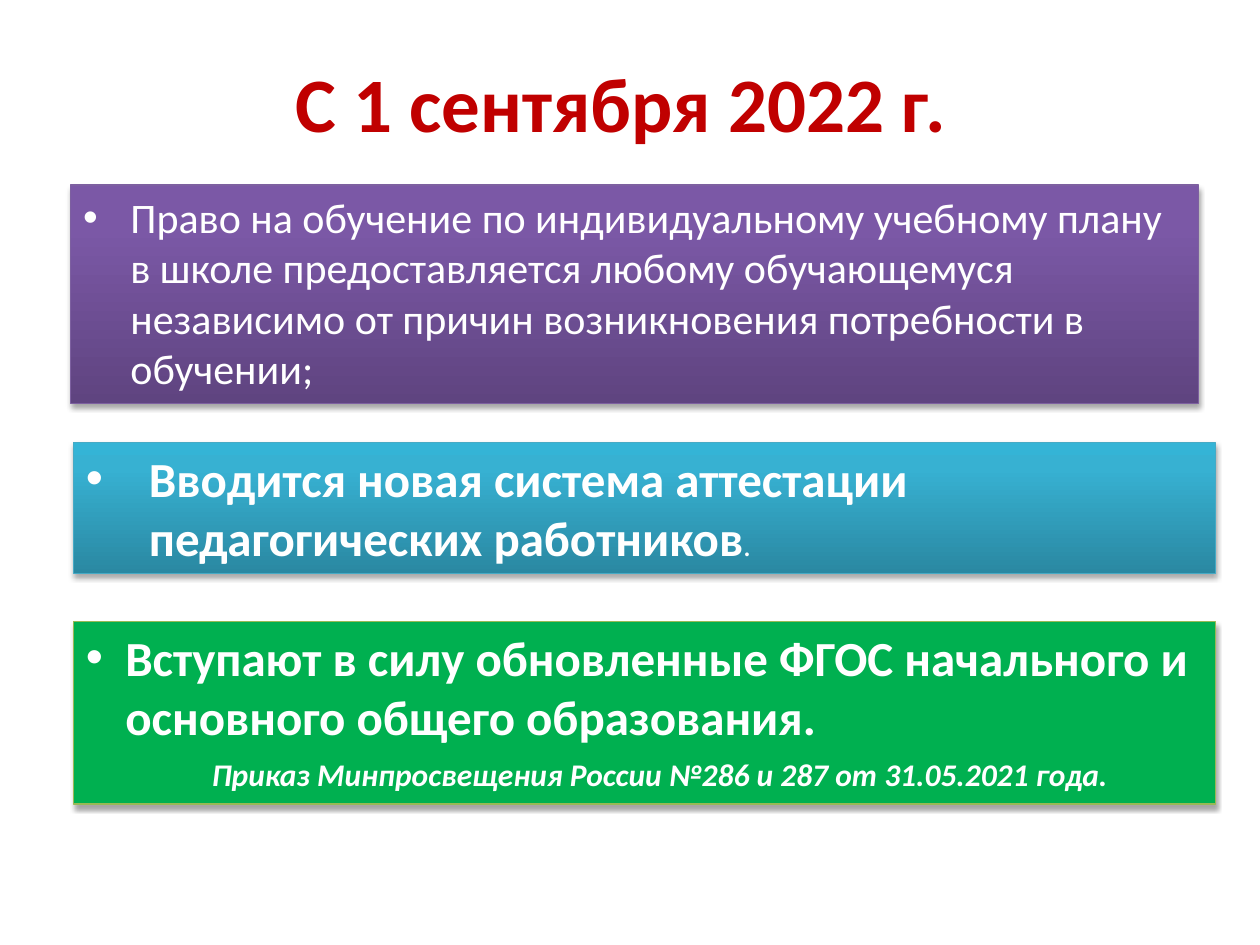
from copy import deepcopy

from lxml import etree
from pptx import Presentation
from pptx.dml.color import RGBColor
from pptx.enum.shapes import MSO_SHAPE
from pptx.enum.text import MSO_ANCHOR, MSO_AUTO_SIZE, PP_ALIGN
from pptx.oxml.ns import qn
from pptx.util import Pt

RECT = MSO_SHAPE.RECTANGLE
TOP, MIDDLE = MSO_ANCHOR.TOP, MSO_ANCHOR.MIDDLE
NO_FIT = MSO_AUTO_SIZE.NONE
LEFT, CENTER = PP_ALIGN.LEFT, PP_ALIGN.CENTER
FONT = "Calibri"
WHITE = "FFFFFF"
TITLE_RED = "C00000"
PURPLE = [(0, "5F4480"), (0.8, "7B58A6"), (1, "7C57A8")]
BLUE = [(0, "2A88A2"), (0.8, "37B1D2"), (1, "34B4D6")]
GREEN = "00B050"


def rgb(value):
    return RGBColor.from_string(value)


def place(s, left, top, width, height):
    s.left, s.top, s.width, s.height = Pt(left), Pt(top), Pt(width), Pt(height)


def add_run(p, text, size, color=WHITE, bold=False, italic=False):
    r = p.add_run()
    r.text = text
    r.font.name = FONT
    r.font.size = Pt(size)
    r.font.bold = bold
    r.font.italic = italic
    r.font.color.rgb = rgb(color)


def set_indent(p, left, hanging=0):
    pPr = p._p.get_or_add_pPr()
    pPr.set("marL", str(Pt(left)))
    pPr.set("indent", str(-Pt(hanging)))
    return pPr


def set_bullet(p, indent):
    pPr = set_indent(p, indent, indent)
    etree.SubElement(pPr, qn("a:buFont")).set("typeface", "Arial")
    etree.SubElement(pPr, qn("a:buChar")).set("char", "•")


def fill_gradient(s, stops):
    """Fill from bottom to top with (position, colour) stops."""
    s.fill.gradient()
    s.fill.gradient_angle = 90
    gs_list = s._element.spPr.find(qn("a:gradFill")).find(qn("a:gsLst"))
    while len(gs_list) < len(stops):
        gs_list.append(deepcopy(gs_list[0]))
    for stop, (position, color) in zip(s.fill.gradient_stops, stops):
        stop.position = position
        stop.color.rgb = rgb(color)


def add_shadow(s):
    effects = etree.SubElement(s._element.spPr, qn("a:effectLst"))
    shadow = etree.SubElement(effects, qn("a:outerShdw"), blurRad=str(Pt(3.1)),
                              dist=str(Pt(1.8)), dir="5400000", rotWithShape="0")
    color = etree.SubElement(shadow, qn("a:srgbClr"), val="000000")
    etree.SubElement(color, qn("a:alpha"), val="35000")


def style_panel(s, fill, line):
    """Style a panel and return its first paragraph."""
    if isinstance(fill, str):
        s.fill.solid()
        s.fill.fore_color.rgb = rgb(fill)
    else:
        fill_gradient(s, fill)
    s.line.color.rgb = rgb(line)
    s.line.width = Pt(0.75)
    add_shadow(s)
    tf = s.text_frame
    tf.word_wrap = True
    tf.auto_size = NO_FIT
    tf.vertical_anchor = TOP
    p = tf.paragraphs[0]
    p.alignment = LEFT
    return p


def add_panel(slide, top, height, fill, line):
    s = slide.shapes.add_shape(RECT, Pt(42), Pt(top), Pt(652.5), Pt(height))
    return s, style_panel(s, fill, line)


def add_title(slide, text):
    s = slide.shapes.title
    place(s, 36, 21.6, 648, 72.7)
    s.text_frame.vertical_anchor = MIDDLE
    p = s.text_frame.paragraphs[0]
    p.alignment = CENTER
    add_run(p, text, 44, TITLE_RED, bold=True)


def add_study_plan(slide):
    s = slide.placeholders[1]
    place(s, 40.3, 105.8, 644.4, 124.6)
    p = style_panel(s, PURPLE, "7D60A0")
    set_bullet(p, 27)
    add_run(p, "Право на обучение по индивидуальному учебному плану в школе "
               "предоставляется любому обучающемуся независимо от причин "
               "возникновения потребности в обучении;", 24)


def add_attestation(slide):
    s, p = add_panel(slide, 252.7, 75, BLUE, "46AAC5")
    set_bullet(p, 36)
    add_run(p, "Вводится новая система аттестации педагогических работников",
            28, bold=True)
    add_run(p, ".", 18)


def add_standards(slide):
    s, p = add_panel(slide, 355, 104.4, GREEN, "98B955")
    set_bullet(p, 22.5)
    add_run(p, "Вступают в силу обновленные ФГОС начального и основного "
               "общего образования.", 28, bold=True)
    p = s.text_frame.add_paragraph()
    p.alignment = LEFT
    p.space_before = Pt(5.5)
    set_indent(p, 72)
    add_run(p, "Приказ Минпросвещения России №286 и 287 от 31.05.2021 года.",
            18, bold=True, italic=True)


def main():
    prs = Presentation()
    prs.slide_width, prs.slide_height = Pt(720), Pt(540)
    slide = prs.slides.add_slide(prs.slide_layouts[1])
    add_title(slide, "С 1 сентября 2022 г. ")
    add_study_plan(slide)
    add_attestation(slide)
    add_standards(slide)
    prs.save("out.pptx")


if __name__ == "__main__":
    main()
